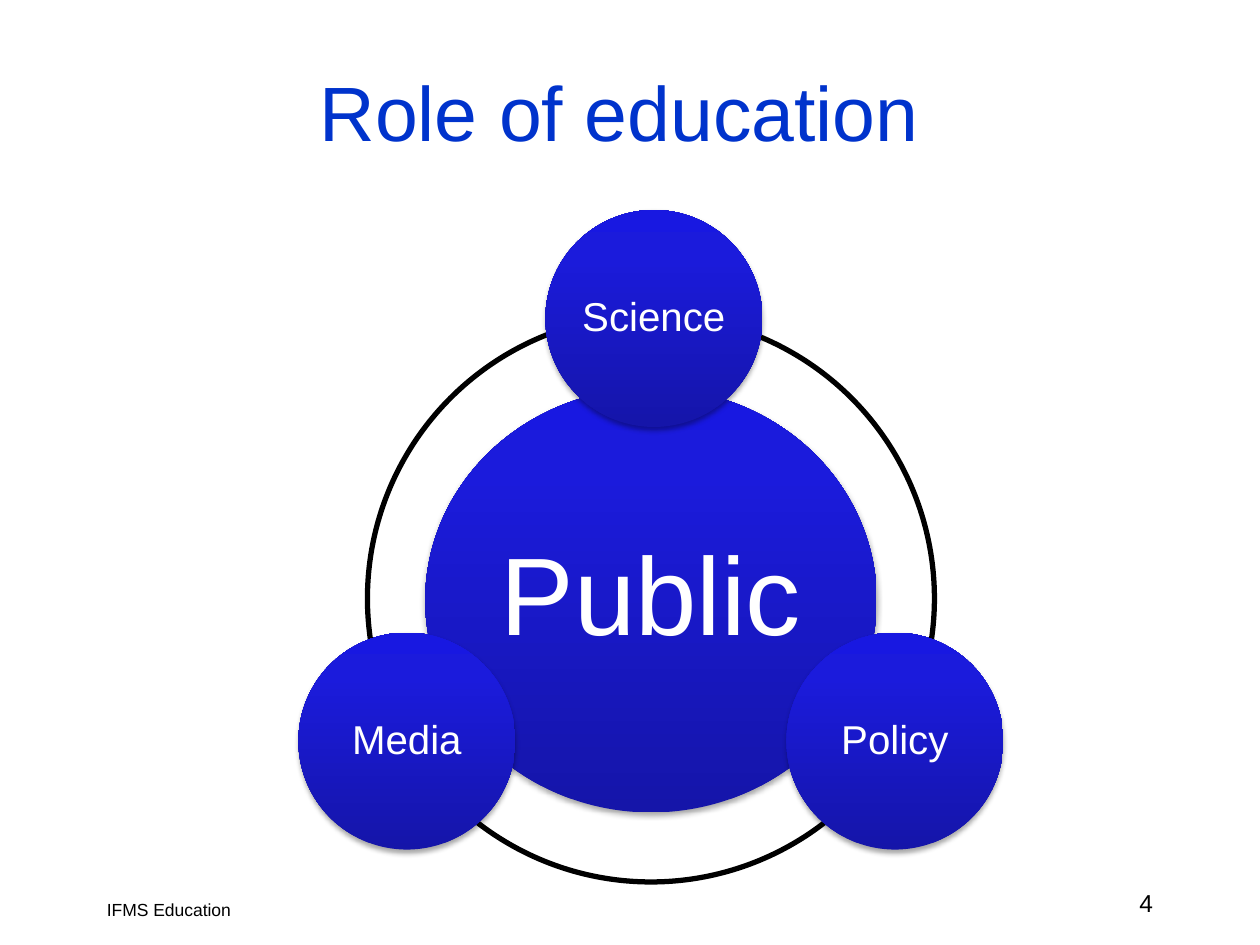
from math import cos, radians, sin

from lxml import etree
from pptx import Presentation
from pptx.dml.color import RGBColor
from pptx.enum.shapes import MSO_SHAPE
from pptx.enum.text import MSO_ANCHOR, PP_ALIGN
from pptx.oxml.ns import nsdecls
from pptx.util import Pt

OVAL = MSO_SHAPE.OVAL
TOP, MIDDLE = MSO_ANCHOR.TOP, MSO_ANCHOR.MIDDLE
LEFT, CENTER, RIGHT = PP_ALIGN.LEFT, PP_ALIGN.CENTER, PP_ALIGN.RIGHT
FONT = "Arial"
COLORS = {"title": "0033CC", "ink": "000000", "paper": "FFFFFF",
          "dark": "1515A9", "mid": "1B1BDC", "light": "1818E1"}

# text, left, top, width, height, size, colour, alignment, anchor
LABELS = [
    ("Role of education", 120, 18, 468, 90, 44, "title", CENTER, MIDDLE),
    ("IFMS Education", 54, 510, 534, 30, 10, "ink", LEFT, TOP),
    ("4", 516, 504, 150, 36, 14, "ink", RIGHT, TOP),
]
MID_X, MID_Y = 372, 343
RING = (372, 342, 324, 324)
CORE = ("Public", 258, 242.6, 63, 3)
ORBIT, DISC = 161, 124
ROLES = [("Science", -89.4), ("Policy", 30), ("Media", 150)]  # degrees
STOPS = [(0, "dark"), (80, "mid"), (100, "light")]


def rgb(name):
    return RGBColor.from_string(COLORS[name])


def write(shape, text, size, color, align, anchor):
    frame = shape.text_frame
    frame.text = text
    frame.word_wrap = True
    frame.vertical_anchor = anchor
    para = frame.paragraphs[0]
    para.alignment = align
    font = para.runs[0].font
    font.name, font.size = FONT, Pt(size)
    font.color.rgb = rgb(color)


def oval(x, y, wide, high):
    """Add an ellipse centred on x, y."""
    shape = slide.shapes.add_shape(
        OVAL, Pt(x - wide / 2), Pt(y - high / 2), Pt(wide), Pt(high))
    shape.shadow.inherit = False
    shape.fill.background()
    return shape


def shade(shape):
    """Give a shape the blue gradient and a soft shadow below."""
    stops = "".join(
        f'<a:gs pos="{pos * 1000}"><a:srgbClr val="{COLORS[name]}"/></a:gs>'
        for pos, name in STOPS)
    fill = etree.fromstring(
        f'<a:gradFill {nsdecls("a")} rotWithShape="1"><a:gsLst>{stops}'
        '</a:gsLst><a:lin ang="16200000" scaled="0"/></a:gradFill>')
    glow = etree.fromstring(
        f'<a:effectLst {nsdecls("a")}><a:outerShdw blurRad="{Pt(3.1)}" '
        f'dist="{Pt(1.8)}" dir="5400000" rotWithShape="0">'
        f'<a:srgbClr val="{COLORS["ink"]}"><a:alpha val="35000"/></a:srgbClr>'
        '</a:outerShdw></a:effectLst>')
    props = shape.fill._xPr
    for tag, new in (("noFill", fill), ("effectLst", glow)):
        old = props.find(f"{{{props.nsmap['a']}}}{tag}")
        props.replace(old, new)


def disc(text, x, y, wide, high, size, inset):
    shape = oval(x, y, wide, high)
    shade(shape)
    shape.line.fill.background()
    write(shape, text, size, "paper", CENTER, MIDDLE)
    frame = shape.text_frame
    frame.margin_left = frame.margin_right = Pt(inset)
    frame.margin_top = frame.margin_bottom = Pt(inset)
    frame.paragraphs[0].line_spacing = 0.9


deck = Presentation()
deck.slide_width, deck.slide_height = Pt(720), Pt(540)
slide = deck.slides.add_slide(deck.slide_layouts[6])

ring = oval(*RING)
ring.line.color.rgb = rgb("ink")
ring.line.width = Pt(3)

name, wide, high, size, inset = CORE
disc(name, MID_X, MID_Y, wide, high, size, inset)
for role, angle in ROLES:
    turn = radians(angle)
    disc(role, MID_X + ORBIT * cos(turn), MID_Y + ORBIT * sin(turn),
         DISC, DISC, 23, 1.5)

for text, x, y, wide, high, *style in LABELS:
    box = slide.shapes.add_textbox(Pt(x), Pt(y), Pt(wide), Pt(high))
    write(box, text, *style)

deck.save("out.pptx")
